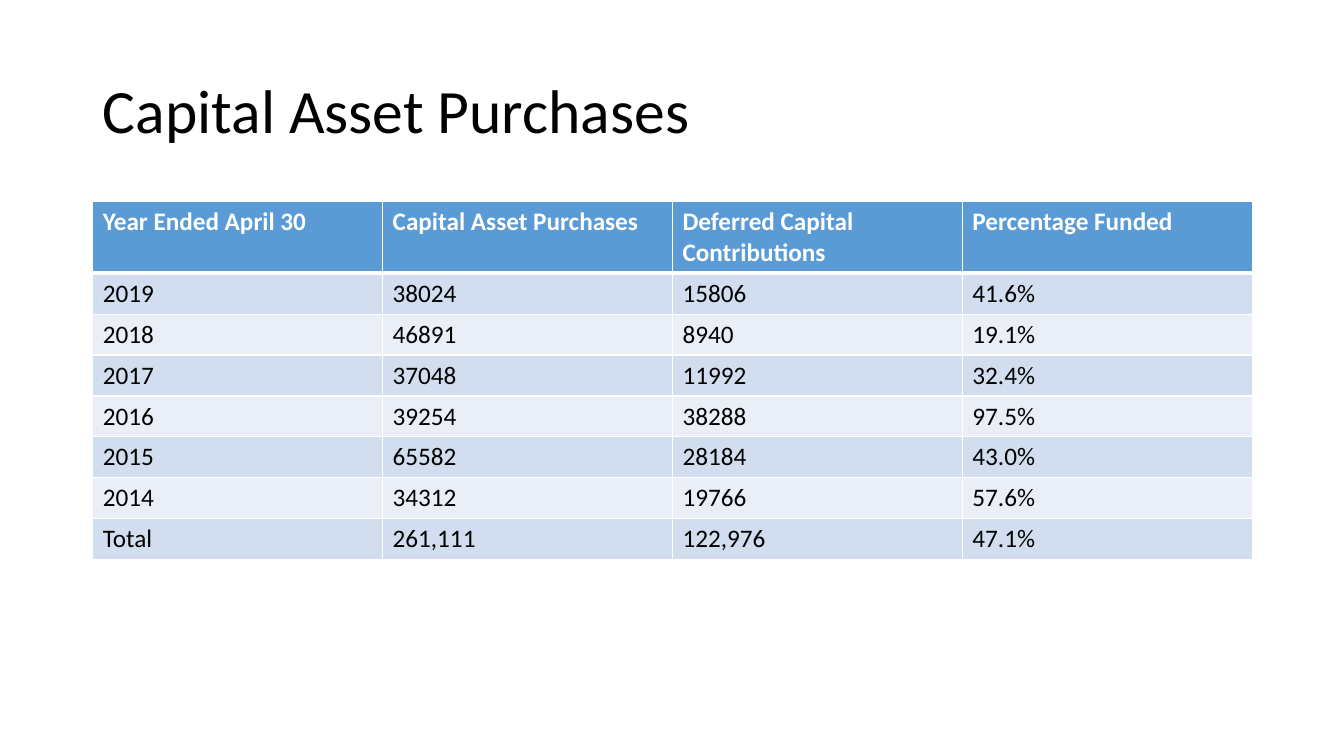
from lxml import etree
from pptx import Presentation
from pptx.dml.color import RGBColor
from pptx.enum import text
from pptx.oxml import ns
from pptx.util import Inches, Pt

FONT = "Calibri"
WHITE, BLACK = "FFFFFF", "000000"
HEADER_FILL = "5B9BD5"
BAND_FILLS = ("D2DEEF", "EAEFF7")

ROWS = [
    ("Year Ended April 30", "Capital Asset Purchases",
     "Deferred Capital Contributions", "Percentage Funded"),
    ("2019", "38024", "15806", "41.6%"),
    ("2018", "46891", "8940", "19.1%"),
    ("2017", "37048", "11992", "32.4%"),
    ("2016", "39254", "38288", "97.5%"),
    ("2015", "65582", "28184", "43.0%"),
    ("2014", "34312", "19766", "57.6%"),
    ("Total", "261,111", "122,976", "47.1%"),
]


def color(hex_code):
    return RGBColor.from_string(hex_code)


def format_font(para, size, hex_code, bold=False):
    para.font.name = FONT
    para.font.size = Pt(size)
    para.font.bold = bold
    para.font.color.rgb = color(hex_code)


def add_borders(cell, **widths):
    """Draw white cell borders; widths in points by side L, R, T, B.

    Call before filling the cell, since borders precede the fill in XML.
    """
    properties = cell._tc.get_or_add_tcPr()
    for side, width in widths.items():
        line = etree.SubElement(properties, ns.qn(f"a:ln{side}"), w=str(Pt(width)))
        fill = etree.SubElement(line, ns.qn("a:solidFill"))
        etree.SubElement(fill, ns.qn("a:srgbClr"), val=WHITE)


def place_title(slide, wording, left, top, width, height):
    title = slide.shapes.title
    title.left, title.top = Inches(left), Inches(top)
    title.width, title.height = Inches(width), Inches(height)
    frame = title.text_frame
    frame.text = wording
    frame.word_wrap = True
    frame.vertical_anchor = text.MSO_ANCHOR.MIDDLE
    para = frame.paragraphs[0]
    para.alignment = text.PP_ALIGN.LEFT
    para.line_spacing = 0.9
    format_font(para, 44, BLACK)


def add_purchases_table(slide, left, top, width, height):
    table = slide.shapes.add_table(
        len(ROWS), len(ROWS[0]),
        Inches(left), Inches(top), Inches(width), Inches(height)).table
    for r, values in enumerate(ROWS):
        is_header = r == 0
        fill = HEADER_FILL if is_header else BAND_FILLS[(r - 1) % 2]
        for c, value in enumerate(values):
            cell = table.cell(r, c)
            add_borders(cell, L=1, R=1, T=3 if r == 1 else 1, B=3 if is_header else 1)
            cell.fill.solid()
            cell.fill.fore_color.rgb = color(fill)
            cell.text = value
            format_font(cell.text_frame.paragraphs[0], 18,
                        WHITE if is_header else BLACK, is_header)


def main():
    deck = Presentation()
    deck.slide_width, deck.slide_height = Inches(13.33), Inches(7.5)
    slide = deck.slides.add_slide(deck.slide_layouts.get_by_name("Title Only"))
    slide.background.fill.solid()
    slide.background.fill.fore_color.rgb = color(WHITE)
    place_title(slide, "Capital Asset Purchases", 0.92, 0.4, 11.5, 1.45)
    add_purchases_table(slide, 0.92, 2, 11.5, 3.25)
    deck.save("out.pptx")


if __name__ == "__main__":
    main()
